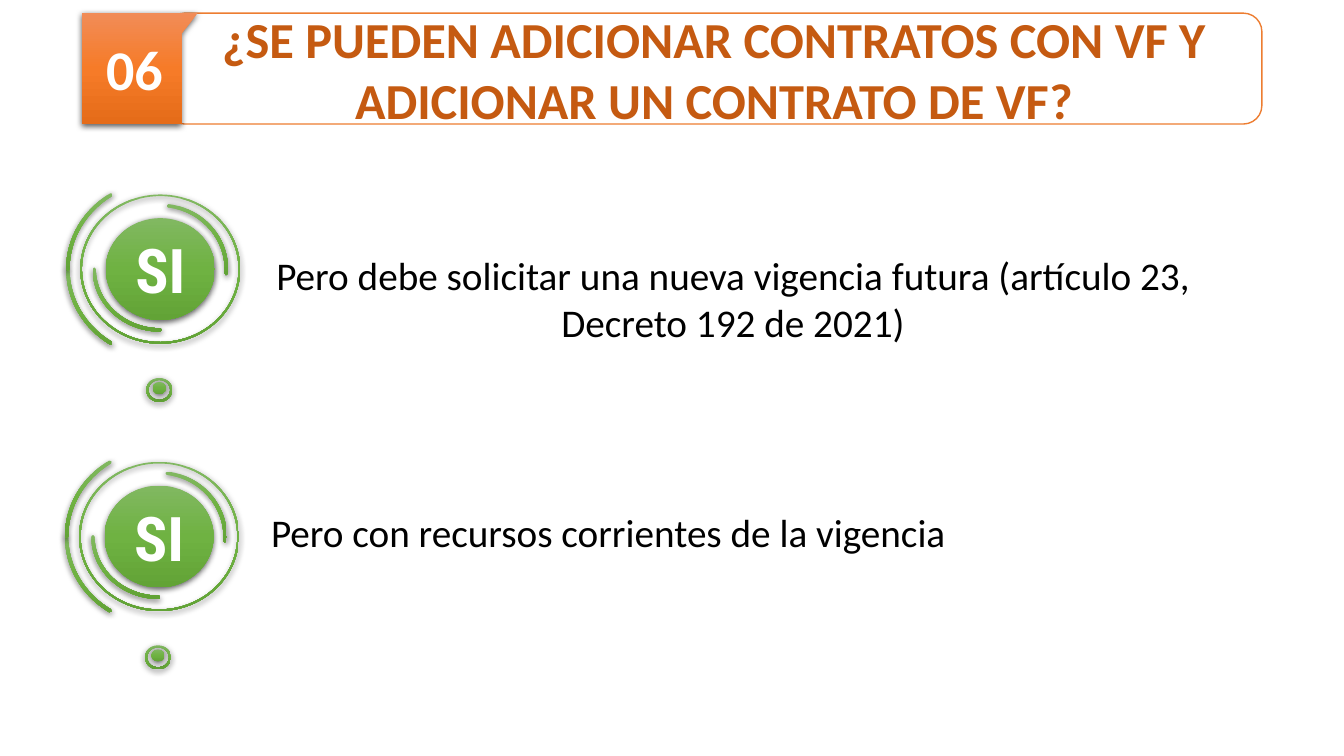
import math
from lxml import etree
from pptx import Presentation
from pptx.dml.color import RGBColor
from pptx.enum import shapes, text
from pptx.oxml import parse_xml
from pptx.oxml.ns import nsdecls, qn
from pptx.util import Pt

WHITE = RGBColor(0xFF, 0xFF, 0xFF)
BLACK = RGBColor(0x00, 0x00, 0x00)
ORANGE = RGBColor(0xED, 0x7D, 0x31)
RUST = RGBColor(0xC5, 0x5A, 0x11)
ORANGES = [RGBColor(0xF1, 0x8C, 0x57), RGBColor(0xF6, 0x7B, 0x28), RGBColor(0xE5, 0x6C, 0x19)]
GREENS = [RGBColor(0x81, 0xB8, 0x61), RGBColor(0x6F, 0xB2, 0x42), RGBColor(0x62, 0xA3, 0x36)]


def add_glossy_style(sp, colors):
    """Give a shape a vertical three-stop gradient, no line and a soft shadow."""
    sp.line.fill.background()
    sp.fill.gradient()
    stops = "".join(
        f'<a:gs pos="{i * 50000}"><a:srgbClr val="{c}"/></a:gs>' for i, c in enumerate(colors))
    grad = parse_xml(f'<a:gradFill {nsdecls("a")} rotWithShape="1"><a:gsLst>{stops}</a:gsLst>'
                     '<a:lin ang="5400000" scaled="0"/></a:gradFill>')
    spPr = sp._element.spPr
    spPr.replace(spPr.find(qn("a:gradFill")), grad)
    sp.shadow.inherit = False
    shadow = etree.SubElement(spPr.find(qn("a:effectLst")), qn("a:outerShdw"),
                              blurRad=str(Pt(4.5)), dist=str(Pt(1.5)), dir="5400000",
                              algn="ctr", rotWithShape="0")
    color = etree.SubElement(shadow, qn("a:srgbClr"), val=str(BLACK))
    etree.SubElement(color, qn("a:alpha"), val="63000")


def write(sp, words, size, color, font="Calibri", bold=False,
          align=text.PP_ALIGN.CENTER, anchor=text.MSO_ANCHOR.MIDDLE):
    """Write one run of text in a shape."""
    tf = sp.text_frame
    tf.word_wrap = True
    tf.auto_size = text.MSO_AUTO_SIZE.NONE
    tf.vertical_anchor = anchor
    p = tf.paragraphs[0]
    p.alignment = align
    r = p.add_run()
    r.text = words
    r.font.name, r.font.size, r.font.bold = font, Pt(size), bold
    r.font.color.rgb = color


def add_outline(parent, points, colors, curved=False):
    """Draw a closed glossy outline, straight or as cubic curves of three points each."""
    points = [(Pt(x), Pt(y)) for x, y in points]
    fb = parent.build_freeform(*points[0])
    fb.add_line_segments(points[1:], close=True)
    sp = fb.convert_to_shape()
    if curved:
        lines = list(sp._element.iter(qn("a:lnTo")))
        for i in range(0, len(lines) - 2, 3):
            curve = etree.Element(qn("a:cubicBezTo"))
            lines[i].addprevious(curve)
            for line in lines[i:i + 3]:
                curve.append(line[0])
                line.getparent().remove(line)
    add_glossy_style(sp, colors)
    return sp


def add_oval(parent, cx, cy, w, h, ring=None):
    """Draw a glossy green oval, or a ring of the given thickness."""
    kind = shapes.MSO_SHAPE.DONUT if ring else shapes.MSO_SHAPE.OVAL
    sp = parent.add_shape(kind, Pt(cx - w / 2), Pt(cy - h / 2), Pt(w), Pt(h))
    if ring:
        sp.adjustments[0] = ring / min(w, h)
    add_glossy_style(sp, GREENS)
    return sp


def add_arc(parent, cx, cy, rx, ry, start, end):
    """Draw a thin green arc with round ends, angles clockwise in degrees."""
    half = 1.2
    start, end = math.radians(start), math.radians(end)
    bend = 4 / 3 * math.tan((end - start) / 4)

    def at(angle, grow, slide_by):
        x, y = math.cos(angle), math.sin(angle)
        return (cx + (rx + grow) * (x - slide_by * y), cy + (ry + grow) * (y + slide_by * x))

    tip = 4 / 3 * half / rx
    points = [at(start, half, 0), at(start, half, bend), at(end, half, -bend), at(end, half, 0),
              at(end, half, tip), at(end, -half, tip), at(end, -half, 0),
              at(end, -half, -bend), at(start, -half, bend), at(start, -half, 0),
              at(start, -half, -tip), at(start, half, -tip), at(start, half, 0)]
    add_outline(parent, points, GREENS, curved=True)


def add_header(slide, box, number, words):
    """Place the framed title and its folded number tag."""
    x, y, w, h = box
    place = [Pt(v) for v in (x + 60.5, y, w - 60.5, h)]
    frame = slide.shapes.add_shape(shapes.MSO_SHAPE.ROUNDED_RECTANGLE, *place)
    frame.shadow.inherit = False
    frame.fill.solid()
    frame.fill.fore_color.rgb = WHITE
    frame.line.color.rgb = ORANGE
    frame.line.width = Pt(1)
    sp = slide.shapes.title
    sp.left, sp.top, sp.width, sp.height = place
    frame._element.addnext(sp._element)
    write(sp, words, 36, RUST, bold=True)
    tag = add_outline(slide.shapes, [(x, y), (x, y + h), (x + 71.3, y + h),
                                     (x + 71.3, y + 14.4), (x + 82.8, y)], ORANGES)
    tf = tag.text_frame
    tf.margin_left = tf.margin_top = tf.margin_bottom = Pt(7.2)
    tf.margin_right = Pt(14.4)
    write(tag, number, 40, WHITE, bold=True)


def add_badge(slide, left, top, words):
    """Place a round badge with its arcs and the dot below it."""
    group = slide.shapes.add_group_shape().shapes
    cx, cy = left + 67.7, top + 53.4
    add_oval(group, cx - 0.7, cy + 86.4, 18.7, 17.3, ring=1.6)
    add_oval(group, cx - 0.7, cy + 85, 9.4, 8.6)
    for rx, ry, start, end in [(66, 62.6, 122, 180), (66, 62.6, 180, 238)]:
        add_arc(group, cx, cy, rx, ry, start, end)
    add_oval(group, cx, cy, 114.3, 106.6, ring=1.2)
    for rx, ry, start, end in [(47.2, 43.5, 90, 180), (47.2, 45.5, -83, 4)]:
        add_arc(group, cx, cy, rx, ry, start, end)
    core = add_oval(group, cx, cy, 77.8, 72.7)
    tf = core.text_frame
    tf.margin_left = tf.margin_right = tf.margin_top = tf.margin_bottom = Pt(7.2)
    write(core, words, 44, WHITE, font="Roboto Condensed", bold=True)


def add_answer(slide, box, words, align):
    """Place an answer beside its badge."""
    sp = slide.shapes.add_textbox(*[Pt(v) for v in box])
    write(sp, words, 28, BLACK, align=align, anchor=text.MSO_ANCHOR.TOP)


def main():
    """Build the slide and save it."""
    prs = Presentation()
    prs.slide_width, prs.slide_height = Pt(960), Pt(540)
    slide = prs.slides.add_slide(prs.slide_layouts[5])
    add_header(slide, (58.3, 9.4, 843.1, 79.2), "06",
               "¿SE PUEDEN ADICIONAR CONTRATOS CON VF Y ADICIONAR UN CONTRATO DE VF?")
    add_badge(slide, 46.8, 138.8, "SI")
    add_answer(slide, (142.6, 175.7, 761.8, 75),
               "Pero debe solicitar una nueva vigencia futura (artículo 23, Decreto 192 de 2021)",
               text.PP_ALIGN.CENTER)
    add_badge(slide, 45.9, 329.8, "SI")
    add_answer(slide, (186.5, 359.6, 757.4, 74.7),
               "Pero con recursos corrientes de la vigencia", text.PP_ALIGN.LEFT)
    prs.save("out.pptx")


if __name__ == "__main__":
    main()
